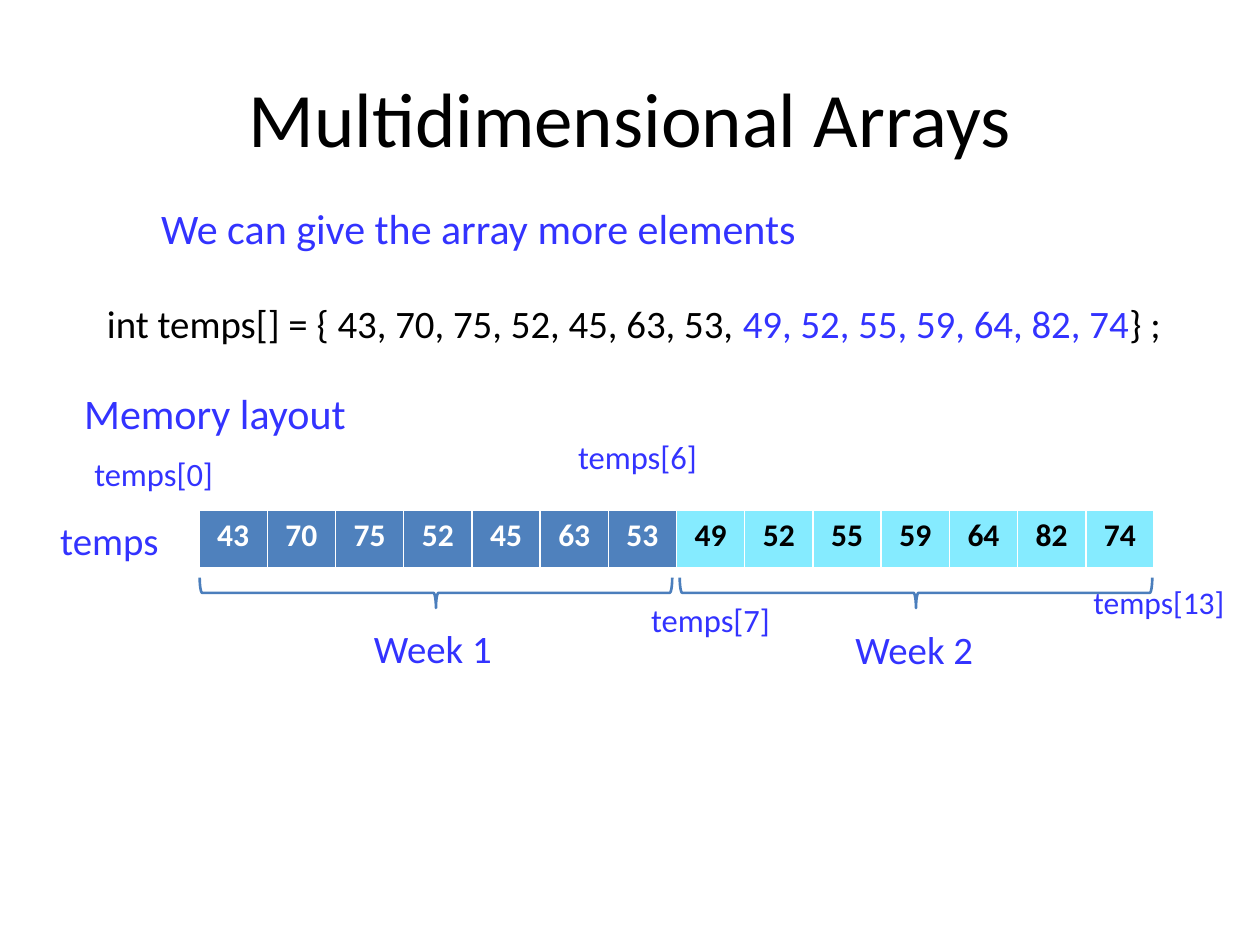
import pptx
import pptx.dml.color
import pptx.enum.shapes
import pptx.enum.text
import pptx.util
from pptx.util import Inches

FONT = "Calibri"
COLORS = {
    "black": "000000",
    "white": "FFFFFF",
    "accent": "3333FF",
    "week1": "4F81BD",
    "week2": "85EBFF",
    "brace": "4B7EBC",
}
WEEK1 = [43, 70, 75, 52, 45, 63, 53]
WEEK2 = [49, 52, 55, 59, 64, 82, 74]

# text, left, top, width, height, size
LABELS = [
    ("We can give the array more elements", 1.18, 1.56, 7.47, 0.69, 24),
    ("Memory layout", 0.57, 3.03, 2.64, 0.56, 24),
    ("temps", 0.38, 4.05, 1.04, 0.41, 22.2),
    ("temps[0]", 0.65, 3.55, 1.17, 0.41, 18.6),
    ("temps[6]", 4.49, 3.42, 1.17, 0.41, 18.6),
    ("temps[7]", 5.07, 4.71, 1.17, 0.41, 18.6),
    ("temps[13]", 8.58, 4.58, 1.29, 0.41, 18),
    ("Week 1", 2.87, 4.91, 1.17, 0.41, 22.2),
    ("Week 2", 6.69, 4.92, 1.17, 0.41, 22.2),
]


def rgb(name):
    return pptx.dml.color.RGBColor.from_string(COLORS[name])


def style_run(run, size, color, bold=False):
    run.font.name = FONT
    run.font.size = pptx.util.Pt(size)
    run.font.bold = bold
    run.font.color.rgb = rgb(color)


def add_text(slide, parts, left, top, width, height, size):
    """Add a one-line text box from (text, color) parts and return it."""
    box = slide.shapes.add_textbox(
        Inches(left), Inches(top), Inches(width), Inches(height))
    box.text_frame.word_wrap = True
    for text, color in parts:
        run = box.text_frame.paragraphs[0].add_run()
        run.text = text
        style_run(run, size, color)
    return box


def add_title(slide):
    title = add_text(slide, [("Multidimensional Arrays", "black")],
                     0.5, 0.3, 9, 1.25, 44)
    title.text_frame.vertical_anchor = pptx.enum.text.MSO_ANCHOR.MIDDLE
    title.text_frame.paragraphs[0].alignment = pptx.enum.text.PP_ALIGN.CENTER


def add_declaration(slide):
    first, second = (", ".join(map(str, week)) for week in (WEEK1, WEEK2))
    parts = [("int temps[] = { " + first + ", ", "black"),
             (second, "accent"), ("} ;", "black")]
    add_text(slide, parts, 0.75, 2.33, 9.08, 0.64, 22.2)


def add_memory_cells(slide):
    temps = WEEK1 + WEEK2
    memory = slide.shapes.add_table(
        1, len(temps), Inches(1.58), Inches(4.05),
        Inches(7.58), Inches(0.46)).table
    for index, temp in enumerate(temps):
        in_week1 = index < len(WEEK1)
        cell = memory.cell(0, index)
        cell.fill.solid()
        cell.fill.fore_color.rgb = rgb("week1" if in_week1 else "week2")
        cell.text_frame.text = str(temp)
        paragraph = cell.text_frame.paragraphs[0]
        paragraph.alignment = pptx.enum.text.PP_ALIGN.CENTER
        style_run(paragraph.runs[0], 18,
                  "white" if in_week1 else "black", bold=True)


def add_week_brace(slide, left):
    brace = slide.shapes.add_shape(
        pptx.enum.shapes.MSO_SHAPE.LEFT_BRACE,
        Inches(left), Inches(2.83), Inches(0.24), Inches(3.75))
    brace.rotation = 270
    brace.shadow.inherit = False
    brace.fill.background()
    brace.line.color.rgb = rgb("brace")
    brace.line.width = pptx.util.Pt(1.5)


def main():
    deck = pptx.Presentation()
    deck.slide_width, deck.slide_height = Inches(10), Inches(7.5)
    slide = deck.slides.add_slide(deck.slide_layouts[6])
    add_title(slide)
    add_declaration(slide)
    add_memory_cells(slide)
    for text, *place in LABELS:
        add_text(slide, [(text, "accent")], *place)
    for left in (3.34, 7.15):
        add_week_brace(slide, left)
    deck.save("out.pptx")


if __name__ == "__main__":
    main()
